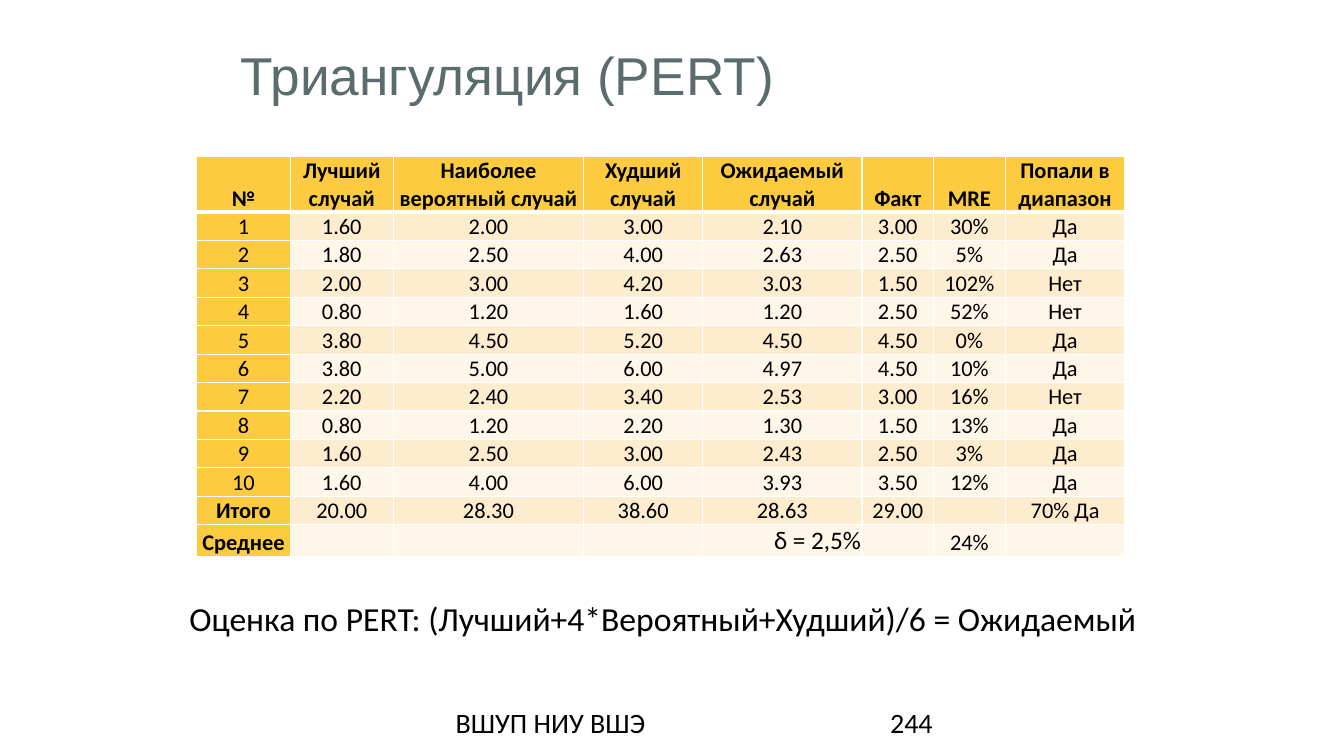
from typing import NamedTuple

from lxml import etree
from pptx import Presentation
from pptx import util as u
from pptx.dml.color import RGBColor
from pptx.enum import text
from pptx.oxml import ns

STEP = u.Inches(0.1)
BLACK = RGBColor(0x00, 0x00, 0x00)
WHITE = RGBColor(0xFF, 0xFF, 0xFF)
SLATE = RGBColor(0x5A, 0x6C, 0x6E)
GOLD = RGBColor(0xFC, 0xCB, 0x40)
BANDS = (RGBColor(0xFE, 0xF6, 0xE8), RGBColor(0xFE, 0xEC, 0xCF))

COLS = (9.3, 10.2, 18.9, 11.8, 15.8, 7.1, 7.1, 11.9)
ROWS = (5.4, *[2.8] * 11, 3.1)
DELTA = "δ = 2,5%"
DATA = (
    ("№", "Лучший случай", "Наиболее вероятный случай", "Худший случай",
     "Ожидаемый случай", "Факт", "MRE", "Попали в диапазон"),
    ("1", "1.60", "2.00", "3.00", "2.10", "3.00", "30%", "Да"),
    ("2", "1.80", "2.50", "4.00", "2.63", "2.50", "5%", "Да"),
    ("3", "2.00", "3.00", "4.20", "3.03", "1.50", "102%", "Нет"),
    ("4", "0.80", "1.20", "1.60", "1.20", "2.50", "52%", "Нет"),
    ("5", "3.80", "4.50", "5.20", "4.50", "4.50", "0%", "Да"),
    ("6", "3.80", "5.00", "6.00", "4.97", "4.50", "10%", "Да"),
    ("7", "2.20", "2.40", "3.40", "2.53", "3.00", "16%", "Нет"),
    ("8", "0.80", "1.20", "2.20", "1.30", "1.50", "13%", "Да"),
    ("9", "1.60", "2.50", "3.00", "2.43", "2.50", "3%", "Да"),
    ("10", "1.60", "4.00", "6.00", "3.93", "3.50", "12%", "Да"),
    ("Итого", "20.00", "28.30", "38.60", "28.63", "29.00", "", "70% Да"),
    ("Среднее", "", "", "", DELTA, "", "24%", ""),
)


class Box(NamedTuple):
    """A place on the grid, in steps."""
    col: float
    row: float
    wide: float
    high: float

    def emu(self) -> list[int]:
        """Return left, top, width and height as lengths."""
        return [grid(part) for part in self]


class Note(NamedTuple):
    """A line of free text."""
    words: str
    box: Box
    size: int
    wrap: bool


NOTES = (
    Note("Оценка по PERT: (Лучший+4*Вероятный+Худший)/6 = Ожидаемый",
         Box(17.8, 58.8, 96.9, 5.1), 24, False),
    Note("ВШУП НИУ ВШЭ", Box(44.2, 69.5, 45, 4), 20, True),
    Note("244", Box(87.3, 69.5, 22.5, 4), 20, True),
)


def grid(steps: float) -> int:
    """Turn grid steps into a length."""
    return round(steps * STEP)


def style(para, size: int, color: RGBColor = BLACK, face: str = "Calibri",
          bold: bool = False) -> None:
    """Set the font of a paragraph."""
    font = para.font
    font.name, font.size, font.bold = face, u.Pt(size), bold
    font.color.rgb = color


def edge(cell, base: int) -> None:
    """Draw white borders round a cell, the lower one of the given width."""
    props = cell._tc.get_or_add_tcPr()
    for side, width in zip("LRTB", (1, 1, 1, base)):
        line = etree.SubElement(props, ns.qn(f"a:ln{side}"), w=str(u.Pt(width)))
        fill = etree.SubElement(line, ns.qn("a:solidFill"))
        etree.SubElement(fill, ns.qn("a:srgbClr"), val=str(WHITE))


def put_cell(cell, words: str, row: int, col: int) -> None:
    """Fill and format one table cell."""
    head = row == 0
    edge(cell, 3 if head else 1)
    cell.fill.solid()
    cell.fill.fore_color.rgb = GOLD if head or col == 0 else BANDS[row % 2]
    cell.margin_left = cell.margin_right = cell.margin_top = u.Inches(0.01)
    cell.margin_bottom = 0
    cell.vertical_anchor = text.MSO_ANCHOR.BOTTOM
    cell.text = words
    para = cell.text_frame.paragraphs[0]
    delta = words == DELTA
    para.alignment = text.PP_ALIGN.RIGHT if delta else text.PP_ALIGN.CENTER
    style(para, 18 if delta else 16, bold=head or col == 0 and row > 10)
    if not words:
        para._p.get_or_add_endParaRPr().set("sz", "1600")


def put_table(slide) -> None:
    """Add the table of estimates."""
    box = Box(19.5, 15.5, sum(COLS), sum(ROWS))
    table = slide.shapes.add_table(len(ROWS), len(COLS), *box.emu()).table
    for col, wide in zip(table.columns, COLS):
        col.width = grid(wide)
    for row, high in zip(table.rows, ROWS):
        row.height = grid(high)
    for i, line in enumerate(DATA):
        for j, words in enumerate(line):
            put_cell(table.cell(i, j), words, i, j)


def put_title(slide) -> None:
    """Place and format the title."""
    title = slide.shapes.title
    title.left, title.top, title.width, title.height = Box(23.5, 4, 86.2, 14.5).emu()
    frame = title.text_frame
    frame.text = "Триангуляция (PERT)"
    frame.vertical_anchor = text.MSO_ANCHOR.TOP
    frame.margin_left = frame.margin_right = u.Inches(0.04)
    frame.margin_top = frame.margin_bottom = u.Inches(0.02)
    para = frame.paragraphs[0]
    para.alignment = text.PP_ALIGN.LEFT
    style(para, 38, SLATE, "Arial")


def put_note(slide, note: Note) -> None:
    """Add a line of free text."""
    frame = slide.shapes.add_textbox(*note.box.emu()).text_frame
    frame.word_wrap = note.wrap
    frame.text = note.words
    style(frame.paragraphs[0], note.size)


def main() -> None:
    """Build and save the slide."""
    deck = Presentation()
    deck.slide_width, deck.slide_height = u.Inches(13.33), u.Inches(7.5)
    slide = deck.slides.add_slide(deck.slide_layouts.get_by_name("Title Only"))
    put_title(slide)
    put_table(slide)
    for note in NOTES:
        put_note(slide, note)
    deck.save("out.pptx")


if __name__ == "__main__":
    main()
